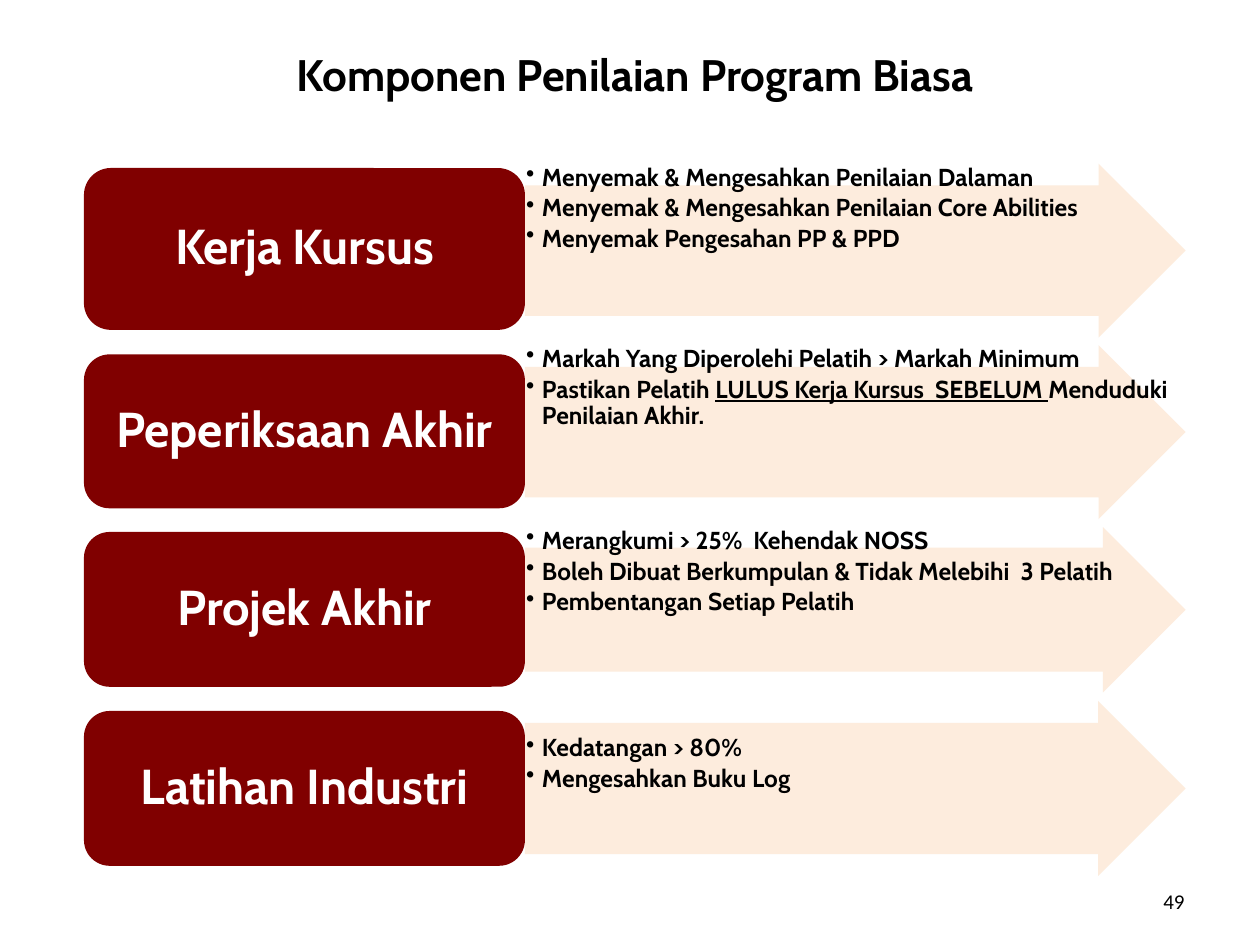
from lxml.etree import SubElement
from pptx import Presentation
from pptx.dml.color import RGBColor
from pptx.enum.shapes import MSO_SHAPE as Shape
from pptx.enum.text import MSO_ANCHOR as Anchor, PP_ALIGN as Align
from pptx.oxml.ns import qn
from pptx.util import Pt

# Content
TITLE = "Komponen Penilaian Program Biasa"
PAGE_NUMBER = "49"
# Component, box (top, height), arrow (top, height), space above bullets, bullets.
# A bullet is a list of text runs; every second run is underlined.
COMPONENTS = [
    ("Kerja Kursus", (96, 92.5), (93.5, 99.4), 0, [
        ["Menyemak & Mengesahkan Penilaian Dalaman"],
        ["Menyemak & Mengesahkan Penilaian Core Abilities"],
        ["Menyemak Pengesahan PP & PPD"]]),
    ("Peperiksaan Akhir", (202.5, 88), (197.2, 99.4), 0, [
        ["Markah Yang Diperolehi Pelatih > Markah Minimum"],
        ["Pastikan Pelatih ", "LULUS Kerja Kursus  SEBELUM ",
         "Menduduki Penilaian Akhir."]]),
    ("Projek Akhir", (304, 88.5), (301.2, 94.4), 0, [
        ["Merangkumi > 25%  Kehendak NOSS"],
        ["Boleh Dibuat Berkumpulan & Tidak Melebihi  3 Pelatih"],
        ["Pembentangan Setiap Pelatih"]]),
    ("Latihan Industri", (406.3, 88.5), (400.6, 100), 19, [
        ["Kedatangan > 80%"],
        ["Mengesahkan Buku Log"]]),
]

# Layout and formats
BOX_LEFT, BOX_WIDTH = 48, 252
ARROW_LEFT, ARROW_WIDTH = BOX_LEFT + BOX_WIDTH, 377.5
INDENT = 9


def rgb(color):
    return RGBColor.from_string(color)


def set_values(target, values):
    for name, value in values.items():
        setattr(target, name, value)


def set_frame(frame, anchor, inset):
    set_values(frame, {
        "word_wrap": True, "vertical_anchor": anchor,
        "margin_left": Pt(inset), "margin_right": Pt(inset),
        "margin_top": Pt(inset), "margin_bottom": Pt(inset)})


def add_run(paragraph, text, size, color="000000", font="Cabin", bold=True, underline=None):
    run = paragraph.add_run()
    run.text = text
    set_values(run.font, {"name": font, "size": Pt(size), "bold": bold, "underline": underline})
    run.font.color.rgb = rgb(color)


def add_filled(kind, left, top, width, height, color):
    shape = slide.shapes.add_shape(kind, Pt(left), Pt(top), Pt(width), Pt(height))
    shape.shadow.inherit = False
    shape.fill.solid()
    shape.fill.fore_color.rgb = rgb(color)
    shape.line.fill.background()
    return shape


def add_arrow(top, height):
    arrow = add_filled(Shape.RIGHT_ARROW, ARROW_LEFT, top, ARROW_WIDTH, height, "FDEADA")
    arrow.adjustments[0], arrow.adjustments[1] = 0.75, 0.5
    color = arrow.fill._xPr.find(qn("a:solidFill"))[0]
    SubElement(color, qn("a:alpha")).set("val", "90000")


def add_bullets(top, height, space_above, bullets):
    area = slide.shapes.add_textbox(Pt(ARROW_LEFT), Pt(top), Pt(ARROW_WIDTH), Pt(height))
    frame = area.text_frame
    set_frame(frame, Anchor.TOP, 0.7)
    frame.margin_top = Pt(0.7 + space_above)
    for i, runs in enumerate(bullets):
        paragraph = frame.add_paragraph() if i else frame.paragraphs[0]
        set_values(paragraph, {"line_spacing": 0.9, "space_after": Pt(2.4)})
        properties = paragraph._p.get_or_add_pPr()
        properties.set("marL", str(Pt(INDENT)))
        properties.set("indent", str(-Pt(INDENT)))
        SubElement(properties, qn("a:buChar")).set("char", "•")
        for j, text in enumerate(runs):
            add_run(paragraph, text, 14, underline=j % 2 == 1)


def add_component_box(name, top, height):
    box = add_filled(Shape.ROUNDED_RECTANGLE, BOX_LEFT, top, BOX_WIDTH, height, "800000")
    set_frame(box.text_frame, Anchor.MIDDLE, 2)
    paragraph = box.text_frame.paragraphs[0]
    set_values(paragraph, {"alignment": Align.CENTER, "line_spacing": 0.9})
    add_run(paragraph, name, 28, "FFFFFF")


prs = Presentation()
set_values(prs, {"slide_width": Pt(720), "slide_height": Pt(540)})
slide = prs.slides.add_slide(prs.slide_layouts[5])

# Title
title = slide.shapes.title
set_values(title, {"left": Pt(42), "top": Pt(24), "width": Pt(641.5), "height": Pt(36.5)})
set_frame(title.text_frame, Anchor.MIDDLE, 0)
heading = title.text_frame.paragraphs[0]
heading.alignment = Align.CENTER
add_run(heading, TITLE, 25.2)

# Components
for name, box_span, arrow_span, space_above, bullets in COMPONENTS:
    add_arrow(*arrow_span)
    add_bullets(*arrow_span, space_above, bullets)
    add_component_box(name, *box_span)

# Page number
footer = slide.shapes.add_textbox(Pt(516), Pt(500.5), Pt(168), Pt(28.75))
set_frame(footer.text_frame, Anchor.MIDDLE, 7.2)
number = footer.text_frame.paragraphs[0]
number.alignment = Align.RIGHT
add_run(number, PAGE_NUMBER, 12, font="Calibri", bold=False)

prs.save("out.pptx")
